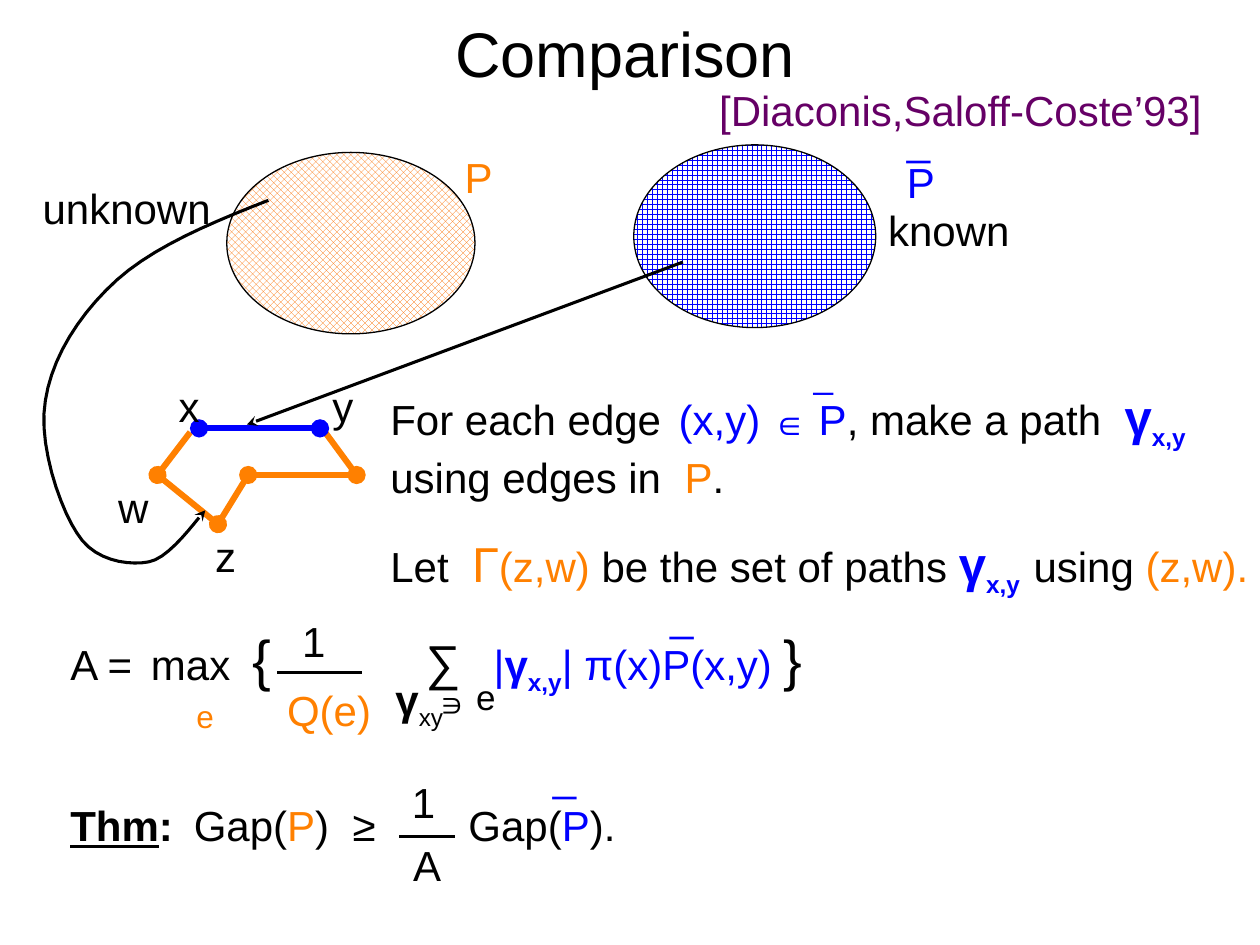
import itertools
from dataclasses import dataclass

import pptx
import pptx.dml.color
import pptx.enum.dml
import pptx.enum.shapes
import pptx.enum.text
import pptx.oxml.ns
import pptx.util
from lxml import etree
from pptx.util import Cm

RGB = pptx.dml.color.RGBColor
BLACK = RGB(0, 0, 0)
WHITE = RGB(0xFF, 0xFF, 0xFF)
BLUE = RGB(0, 0, 0xFF)
ORANGE = RGB(0xFF, 0x80, 0)
HATCH = RGB(0xFC, 0x6F, 0)
PURPLE = RGB(0x66, 0, 0x66)
PATTERN = pptx.enum.dml.MSO_PATTERN
qn = pptx.oxml.ns.qn


@dataclass
class Run:
    text: str
    color: RGB = BLACK
    size: float = 24
    bold: bool = False
    sub: bool = False
    underline: bool = False


@dataclass
class Label:
    x: float
    y: float
    w: float
    runs: list
    spacing: float = 1
    tabs: tuple = ()
    h: float = 0.5
    rotation: float = 0


@dataclass
class Line:
    start: tuple
    end: tuple
    color: RGB = BLACK
    width: float = 1.75
    head: str = ""
    tail: str = ""


def inch(v: float) -> Cm:
    return Cm(v * 2.54)


def add_paragraph(p, runs: list, spacing: float = 1, tabs: tuple = ()) -> None:
    p.line_spacing = spacing
    if tabs:
        tab_list = etree.SubElement(p._p.get_or_add_pPr(), qn("a:tabLst"))
        for pos in tabs:
            etree.SubElement(tab_list, qn("a:tab"), pos=str(int(inch(pos))), algn="l")
    for run in runs:
        r = p.add_run()
        r.text = run.text
        r.font.name = "Arial"
        r.font.size = pptx.util.Pt(run.size)
        r.font.bold = run.bold
        r.font.underline = run.underline
        r.font.color.rgb = run.color
        if run.sub:
            r.font._element.set("baseline", "-25000")


def add_label(s, label: Label):
    sp = s.shapes.add_textbox(*map(inch, (label.x, label.y, label.w, label.h)))
    sp.rotation = label.rotation
    tf = sp.text_frame
    tf.word_wrap = True
    add_paragraph(tf.paragraphs[0], label.runs, label.spacing, label.tabs)
    return tf


def style_line(sp, color: RGB, width: float, head: str = "", tail: str = "") -> None:
    sp.line.color.rgb = color
    sp.line.width = pptx.util.Pt(width)
    ln = sp.line._get_or_add_ln()
    for tag, kind in (("a:headEnd", head), ("a:tailEnd", tail)):
        if kind:
            etree.SubElement(ln, qn(tag), type=kind)


def add_line(s, line: Line) -> None:
    sp = s.shapes.add_connector(pptx.enum.shapes.MSO_CONNECTOR.STRAIGHT,
                                *map(inch, line.start + line.end))
    style_line(sp, line.color, line.width, line.head, line.tail)
    etree.SubElement(sp._element.spPr, qn("a:effectLst"))


def add_ellipse(s, x: float, y: float, w: float, h: float, pattern, color: RGB) -> None:
    sp = s.shapes.add_shape(pptx.enum.shapes.MSO_SHAPE.OVAL, *map(inch, (x, y, w, h)))
    sp.shadow.inherit = False
    sp.fill.patterned()
    sp.fill.pattern = pattern
    sp.fill.fore_color.rgb = color
    sp.fill.back_color.rgb = WHITE
    style_line(sp, BLACK, 0.75)


def add_curve(s, knots: list, steps: int = 10) -> None:
    """Draw a chain of cubic curves; every third knot lies on the curve."""
    points = []
    for i in range(0, len(knots) - 1, 3):
        for k in range(1, steps + 1):
            t = k / steps
            weights = ((1 - t) ** 3, 3 * t * (1 - t) ** 2, 3 * t * t * (1 - t), t ** 3)
            points.append(tuple(inch(sum(b * q[axis] for b, q in zip(weights, knots[i:i + 4])))
                                for axis in (0, 1)))
    fb = s.shapes.build_freeform(*map(inch, knots[0]))
    fb.add_line_segments(points, close=False)
    sp = fb.convert_to_shape()
    sp.shadow.inherit = False
    sp.fill.background()
    style_line(sp, BLACK, 1.75, tail="stealth")


def gamma(subscript: str) -> list:
    return [Run("γ", BLUE, 28, True), Run(subscript, BLUE, bold=True, sub=True)]


LABELS = [
    Label(5.61, 0.62, 4.3, [Run("[Diaconis,Saloff-Coste’93]", PURPLE)]),
    # Chain names
    Label(0.24, 1.4, 2, [Run("unknown")]),
    Label(3.59, 1.15, 0.5, [Run("P", ORANGE)]),
    Label(6.95, 1.65, 1.35, [Run("known")], 0.8),
    Label(7.1, 1.24, 0.5, [Run("P", BLUE)], 0.9),
    # Vertex names
    Label(0.84, 3.77, 0.5, [Run("w")]),
    Label(1.61, 4.16, 0.5, [Run("z")]),
    Label(1.32, 2.97, 0.5, [Run("x")]),
    Label(2.54, 2.97, 0.5, [Run("y")]),
    # Formula for A
    Label(0.46, 4.91, 7.5, [
        Run("A =\tmax\t"), Run("{", size=32), Run("\t"), Run("∑", size=28),
        Run("\t|", BLUE), Run("γ", BLUE, bold=True), Run("x,y", BLUE, bold=True, sub=True),
        Run("| π(x)P(x,y) ", BLUE), Run("}", size=32)],
        tabs=(0.64, 1.45, 2.82, 3.36)),
    Label(2.3, 4.8, 0.5, [Run("1")], 1.1),
    Label(2.18, 5.38, 1.2, [Run("Q(e)", ORANGE)]),
    Label(1.46, 5.54, 0.5, [Run("e", ORANGE, 18)], 0.8),
    Label(3.04, 5.34, 0.8, [Run("γ", bold=True), Run("xy", sub=True)], 0.8),
    Label(3.68, 5.38, 0.5, [Run("e", size=20)], 0.8),
    Label(3.22, 4.93, 0.59, [Run("∈", size=18, bold=True)], 0.4, h=0.76, rotation=180),
    # Theorem
    Label(0.46, 6.3, 4.75, [
        Run("Thm", bold=True, underline=True), Run(":\t", bold=True), Run("Gap("),
        Run("P", ORANGE), Run(")\t≥\tGap("), Run("P", BLUE), Run(").")],
        tabs=(0.98, 2.24, 3.16)),
    Label(3.17, 6.11, 0.5, [Run("1")]),
    Label(3.18, 6.61, 0.5, [Run("A")]),
    # Bars over P
    Label(7.1, 0.93, 0.5, [Run("_", BLUE)], 0.8),
    Label(6.36, 2.85, 0.5, [Run("_", BLUE, 20)], 0.7),
    Label(4.29, 5.98, 0.5, [Run("_", BLUE)], 0.8),
    Label(5.22, 4.74, 0.5, [Run("_", BLUE)], 0.7),
]

EDGE_RUNS = [
    Run("For each edge"), Run(" ", size=12), Run(" "), Run("(x,y) ", BLUE),
    Run("∈", BLUE, 20, True), Run(" P", BLUE), Run(", make a path  "), *gamma("x,y "),
    Run(" using edges in  "), Run("P", ORANGE), Run(".")]
PATH_RUNS = [
    Run("Let  "), Run("Γ", ORANGE, 28), Run("(z,w) ", ORANGE), Run("be the set of paths "),
    *gamma("x,y  "), Run("using "), Run("(z,w).", ORANGE)]

DETOUR = [(1.51, 3.43), (1.25, 3.77), (1.73, 4.16), (1.97, 3.77), (2.83, 3.77), (2.58, 3.43)]
LOOP = [(2.13, 1.59), (1.67, 1.77), (1.22, 1.96), (0.93, 2.22), (0.63, 2.49), (0.41, 2.84),
        (0.36, 3.18), (0.3, 3.51), (0.47, 4.02), (0.61, 4.23), (0.74, 4.45), (1.01, 4.49),
        (1.18, 4.46), (1.35, 4.43), (1.56, 4.12), (1.63, 4.05)]
LINES = [
    Line((1.58, 3.4), (2.54, 3.4), BLUE, 3.5, "oval", "oval"),
    Line((5.42, 2.08), (1.96, 3.37), tail="stealth"),
    Line((3.17, 6.64), (3.61, 6.64), width=2),
    Line((2.2, 5.34), (2.87, 5.34)),
]


def main() -> None:
    prs = pptx.Presentation()
    prs.slide_width, prs.slide_height = inch(10), inch(7.5)
    s = prs.slides.add_slide(prs.slide_layouts[6])

    # Title
    tf = add_label(s, Label(0.75, 0, 8.42, [Run("Comparison", size=36)], h=0.83))
    tf.vertical_anchor = pptx.enum.text.MSO_ANCHOR.MIDDLE
    tf.paragraphs[0].alignment = pptx.enum.text.PP_ALIGN.CENTER

    # The two chains
    add_ellipse(s, 1.8, 1.21, 1.97, 1.44, PATTERN.OUTLINED_DIAMOND, HATCH)
    add_ellipse(s, 5.03, 1.15, 1.92, 1.45, PATTERN.LARGE_GRID, BLUE)

    # Path from x to y, its edge and the pointers
    for start, end in itertools.pairwise(DETOUR):
        add_line(s, Line(start, end, ORANGE, 3.5, tail="" if end == DETOUR[-1] else "oval"))
    add_curve(s, LOOP)
    for line in LINES:
        add_line(s, line)

    # Explanation
    tf = add_label(s, Label(3, 3.02, 7.17, EDGE_RUNS, h=1.64))
    add_paragraph(tf.add_paragraph(), PATH_RUNS, 1.5)

    # Labels and formulas
    for label in LABELS:
        add_label(s, label)

    prs.save("out.pptx")


if __name__ == "__main__":
    main()
